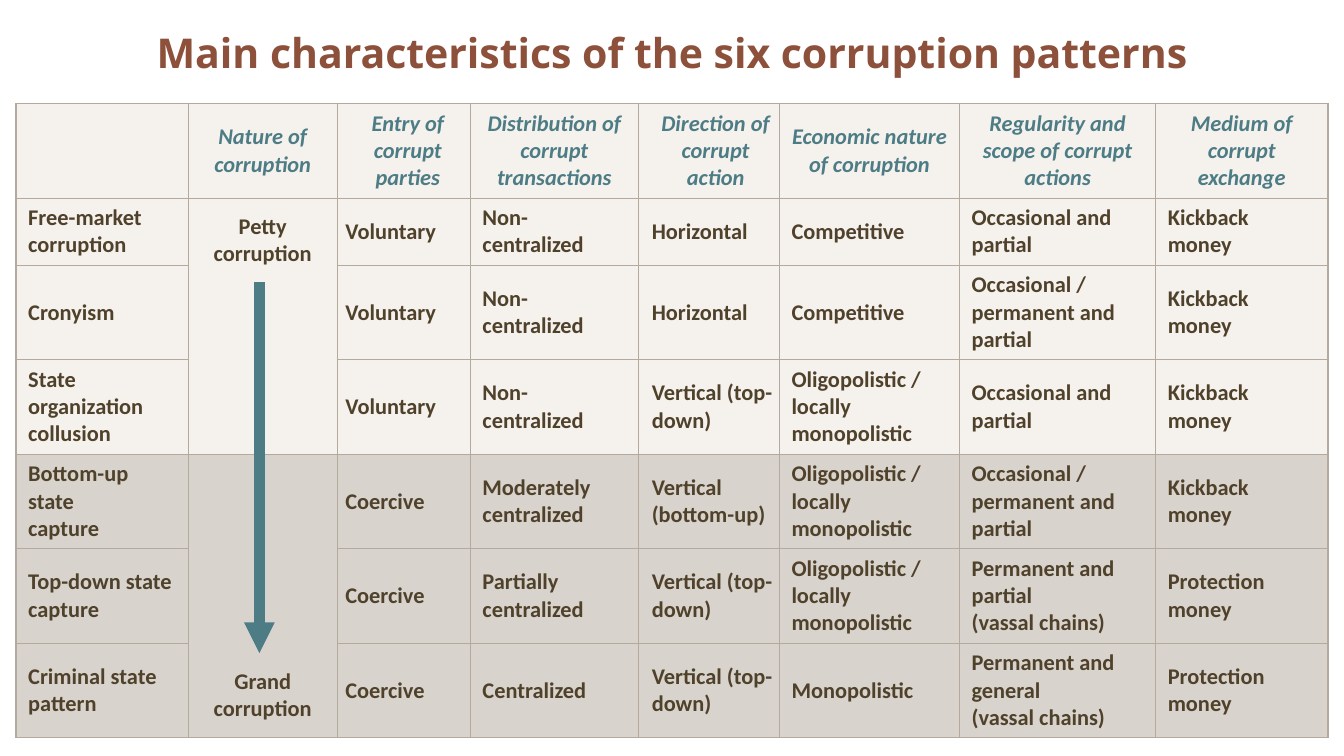
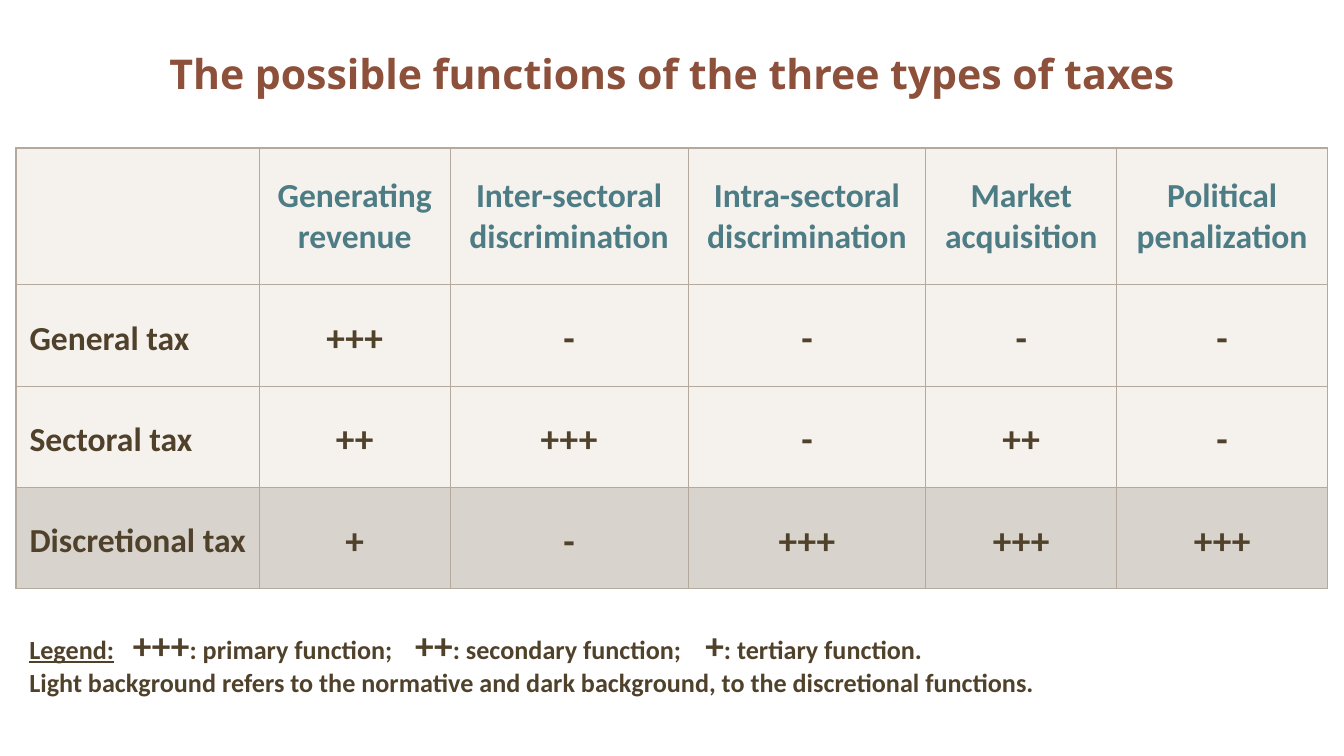
from dataclasses import dataclass

from lxml import etree
from pptx import Presentation
from pptx.dml.color import RGBColor
from pptx.enum.shapes import MSO_CONNECTOR
from pptx.enum.text import MSO_ANCHOR, MSO_AUTO_SIZE, PP_ALIGN
from pptx.oxml.ns import qn
from pptx.util import Inches, Pt

LEFT, CENTER = PP_ALIGN.LEFT, PP_ALIGN.CENTER
TOP, MIDDLE, BOTTOM = MSO_ANCHOR.TOP, MSO_ANCHOR.MIDDLE, MSO_ANCHOR.BOTTOM
STRAIGHT = MSO_CONNECTOR.STRAIGHT
TITLE_ONLY = 5


@dataclass(frozen=True)
class Theme:
    title_font: str = "Open Sans"
    body_font: str = "Calibri"
    title: str = "8D503B"
    heading: str = "4D7C85"
    text: str = "50412B"
    border: str = "B3A99D"
    light: tuple = ("EFEAE4", 60)  # colour, opacity in percent
    dark: tuple = ("B3AA9D", 50)
    title_size: int = 22
    pattern_size: int = 12
    legend_size: int = 14
    tax_size: int = 18
    mark_size: int = 20
    inner_line: float = 0.5
    outer_line: float = 1
    arrow_line: float = 5.5
    left: float = 0.12
    width: float = 9.76


class Deck:
    def __init__(self, theme):
        self.theme = theme
        self.presentation = Presentation()
        self.presentation.slide_width = Inches(10)
        self.presentation.slide_height = Inches(10 * 9 / 16)
        self.slide = None

    def add_slide(self, title, title_height):
        theme = self.theme
        layout = self.presentation.slide_layouts[TITLE_ONLY]
        self.slide = self.presentation.slides.add_slide(layout)
        shape = self.slide.shapes.title
        shape.left, shape.top = Inches(theme.left), Inches(0)
        shape.width, shape.height = Inches(theme.width), Inches(title_height)
        frame = shape.text_frame
        frame.text = title
        frame.auto_size = MSO_AUTO_SIZE.NONE
        frame.vertical_anchor = MIDDLE
        paragraph = frame.paragraphs[0]
        paragraph.alignment = CENTER
        self.set_font(paragraph, theme.title_size, theme.title, theme.title_font)

    def set_font(self, paragraph, size, color, name=None, italic=False):
        font = paragraph.font
        font.name = name or self.theme.body_font
        font.size = Pt(size)
        font.bold = True
        font.italic = italic
        font.color.rgb = RGBColor.from_string(color)

    def add_table(self, top, widths, heights, dark_from):
        """Add an empty table whose rows are dark from row dark_from on."""
        theme = self.theme
        table = self.slide.shapes.add_table(
            len(heights), len(widths), Inches(theme.left), Inches(top),
            Inches(theme.width), Inches(sum(heights))).table
        table.first_row = table.horz_banding = False
        for column, width in zip(table.columns, widths):
            column.width = Inches(width)
        for row, height in zip(table.rows, heights):
            row.height = Inches(height)
        last_row, last_column = len(heights) - 1, len(widths) - 1
        for row in range(len(heights)):
            for column in range(len(widths)):
                cell = table.cell(row, column)
                self.fill_cell(cell, theme.dark if row >= dark_from else theme.light)
                self.border_cell(cell, L=column == 0, R=column == last_column,
                                 T=row == 0, B=row == last_row)
        return table

    def fill_cell(self, cell, fill):
        color, opacity = fill
        cell.fill.solid()
        cell.fill.fore_color.rgb = RGBColor.from_string(color)
        color_element = cell._tc.tcPr.find(".//" + qn("a:srgbClr"))
        etree.SubElement(color_element, qn("a:alpha"), val=str(opacity * 1000))

    def border_cell(self, cell, **outer_sides):
        theme = self.theme
        for index, (side, outer) in enumerate(outer_sides.items()):
            width = Pt(theme.outer_line if outer else theme.inner_line)
            line = etree.Element(qn("a:ln" + side), w=str(width))
            fill = etree.SubElement(line, qn("a:solidFill"))
            etree.SubElement(fill, qn("a:srgbClr"), val=theme.border)
            cell._tc.tcPr.insert(index, line)

    def merge_down(self, first, last):
        """Merge two cells of a column, keeping the lower border of the last."""
        first.merge(last)
        lower_border = last._tc.tcPr.find(qn("a:lnB"))
        first._tc.tcPr.find(qn("a:lnB")).set("w", lower_border.get("w"))

    def write_cell(self, cell, text, size, color, alignment=LEFT, italic=False,
                   spacing=None, anchor=MIDDLE, margins=(0.1, 0.05, 0.1, 0.05)):
        """Write text in a cell; margins are left, top, right, bottom."""
        (cell.margin_left, cell.margin_top,
         cell.margin_right, cell.margin_bottom) = map(Inches, margins)
        cell.vertical_anchor = anchor
        cell.text_frame.text = text
        for paragraph in cell.text_frame.paragraphs:
            paragraph.alignment = alignment
            if spacing:
                paragraph.line_spacing = spacing
            self.set_font(paragraph, size, color, italic=italic)

    def add_arrow(self, x, start, end):
        theme = self.theme
        arrow = self.slide.shapes.add_connector(
            STRAIGHT, Inches(x), Inches(start), Inches(x), Inches(end))
        arrow.line.color.rgb = RGBColor.from_string(theme.heading)
        arrow.line.width = Pt(theme.arrow_line)
        properties = arrow._element.spPr
        etree.SubElement(properties.find(qn("a:ln")), qn("a:tailEnd"), type="triangle")
        etree.SubElement(properties, qn("a:effectLst"))

    def add_legend(self, top, height, entries, note, tabs):
        """Add a line of (mark, meaning) entries at tab stops, and a note below."""
        theme = self.theme
        box = self.slide.shapes.add_textbox(
            Inches(theme.left), Inches(top), Inches(theme.width), Inches(height))
        frame = box.text_frame
        frame.word_wrap = True
        frame.vertical_anchor = MIDDLE
        key, remark = frame.paragraphs[0], frame.add_paragraph()
        tab_list = etree.SubElement(key._p.get_or_add_pPr(), qn("a:tabLst"))
        for position in tabs:
            etree.SubElement(tab_list, qn("a:tab"), pos=str(Inches(position)), algn="l")
        for paragraph in (key, remark):
            self.set_font(paragraph, theme.legend_size, theme.text)
        label = key.add_run()
        label.text = "Legend:"
        label.font.underline = True
        for mark, meaning in entries:
            run = key.add_run()
            run.text = "\t" + mark
            run.font.size = Pt(theme.mark_size)
            key.add_run().text = ": " + meaning
        remark.text = note


PATTERN_HEADINGS = [
    "", "Nature of corruption", "Entry of corrupt parties",
    "Distribution of corrupt transactions", "Direction of corrupt action",
    "Economic nature of corruption", "Regularity and scope of corrupt actions",
    "Medium of corrupt exchange",
]
OLIGOPOLY = "Oligopolistic / locally monopolistic"
CHANGING = "Occasional / permanent and partial"
# The second column is merged and written separately
PATTERNS = [
    ["Free-market corruption", None, "Voluntary", "Non-centralized", "Horizontal",
     "Competitive", "Occasional and partial", "Kickback money"],
    ["Cronyism", None, "Voluntary", "Non-centralized", "Horizontal",
     "Competitive", CHANGING, "Kickback money"],
    ["State organization collusion", None, "Voluntary", "Non-centralized",
     "Vertical (top-down)", OLIGOPOLY, "Occasional and partial", "Kickback money"],
    ["Bottom-up state\ncapture", None, "Coercive", "Moderately centralized",
     "Vertical (bottom-up)", OLIGOPOLY, CHANGING, "Kickback money"],
    ["Top-down state capture", None, "Coercive", "Partially centralized",
     "Vertical (top-down)", OLIGOPOLY, "Permanent and partial\n(vassal chains)",
     "Protection money"],
    ["Criminal state pattern", None, "Coercive", "Centralized",
     "Vertical (top-down)", "Monopolistic",
     "Permanent and general\n(vassal chains)", "Protection money"],
]
TAX_HEADINGS = ["", "Generating revenue", "Inter-sectoral discrimination",
                "Intra-sectoral discrimination", "Market acquisition",
                "Political penalization"]
TAXES = [
    ["General tax", "+++", "-", "-", "-", "-"],
    ["Sectoral tax", "++", "+++", "-", "++", "-"],
    ["Discretional tax", "+", "-", "+++", "+++", "+++"],
]


def build_patterns(deck):
    theme = deck.theme
    deck.add_slide("Main characteristics of the six corruption patterns", 0.77)
    tall = (4.72 - 0.5) / 6
    table = deck.add_table(0.77, [1.28, 1.11, 0.99, 1.25, 1.05, 1.34, 1.46, 1.28],
                           [tall, 0.5] + [tall] * 5, dark_from=4)
    wide = (0.09, 0.04, 0.09, 0.04)
    tight = {1: (0, 0, 0, 0), 2: (0.06, 0, 0, 0), 4: (0.1, 0, 0, 0)}
    for row, texts in enumerate([PATTERN_HEADINGS] + PATTERNS):
        heading = row == 0
        for column, text in enumerate(texts):
            if text:
                deck.write_cell(table.cell(row, column), text, theme.pattern_size,
                                theme.heading if heading else theme.text,
                                CENTER if heading else LEFT, italic=heading,
                                margins=tight.get(column, wide))

    # Scale from petty to grand corruption
    for first, text, anchor in ((1, "Petty corruption", TOP),
                                (4, "Grand corruption", BOTTOM)):
        cell = table.cell(first, 1)
        deck.merge_down(cell, table.cell(first + 2, 1))
        deck.write_cell(cell, text, theme.pattern_size, theme.text, CENTER,
                        anchor=anchor, margins=(0, 0.11, 0, 0.11))
    deck.add_arrow(1.93, 2.1, 4.86)


def build_taxes(deck):
    theme = deck.theme
    deck.add_slide("The possible functions of the three types of taxes", 1.09)
    table = deck.add_table(1.1, [1.81, 1.42, 1.77, 1.77, 1.42, 1.57],
                           [1.02] + [(3.28 - 1.02) / 3] * 3, dark_from=3)
    for column, text in enumerate(TAX_HEADINGS):
        if text:
            deck.write_cell(table.cell(0, column), text, theme.tax_size,
                            theme.heading, CENTER)
    for row, (name, *marks) in enumerate(TAXES, 1):
        deck.write_cell(table.cell(row, 0), name, theme.tax_size, theme.text,
                        spacing=1.15)
        for column, mark in enumerate(marks, 1):
            deck.write_cell(table.cell(row, column), mark, theme.mark_size,
                            theme.text, CENTER, spacing=1.15)

    # Legend below the table
    deck.add_legend(
        4.48, 0.86,
        [("+++", "primary function;"), ("++", "secondary function;"),
         ("+", "tertiary function.")],
        "Light background refers to the normative and dark background, "
        "to the discretional functions.",
        tabs=[0.77, 2.87, 5.03])


def main():
    deck = Deck(Theme())
    build_patterns(deck)
    build_taxes(deck)
    deck.presentation.save("out.pptx")


if __name__ == "__main__":
    main()
